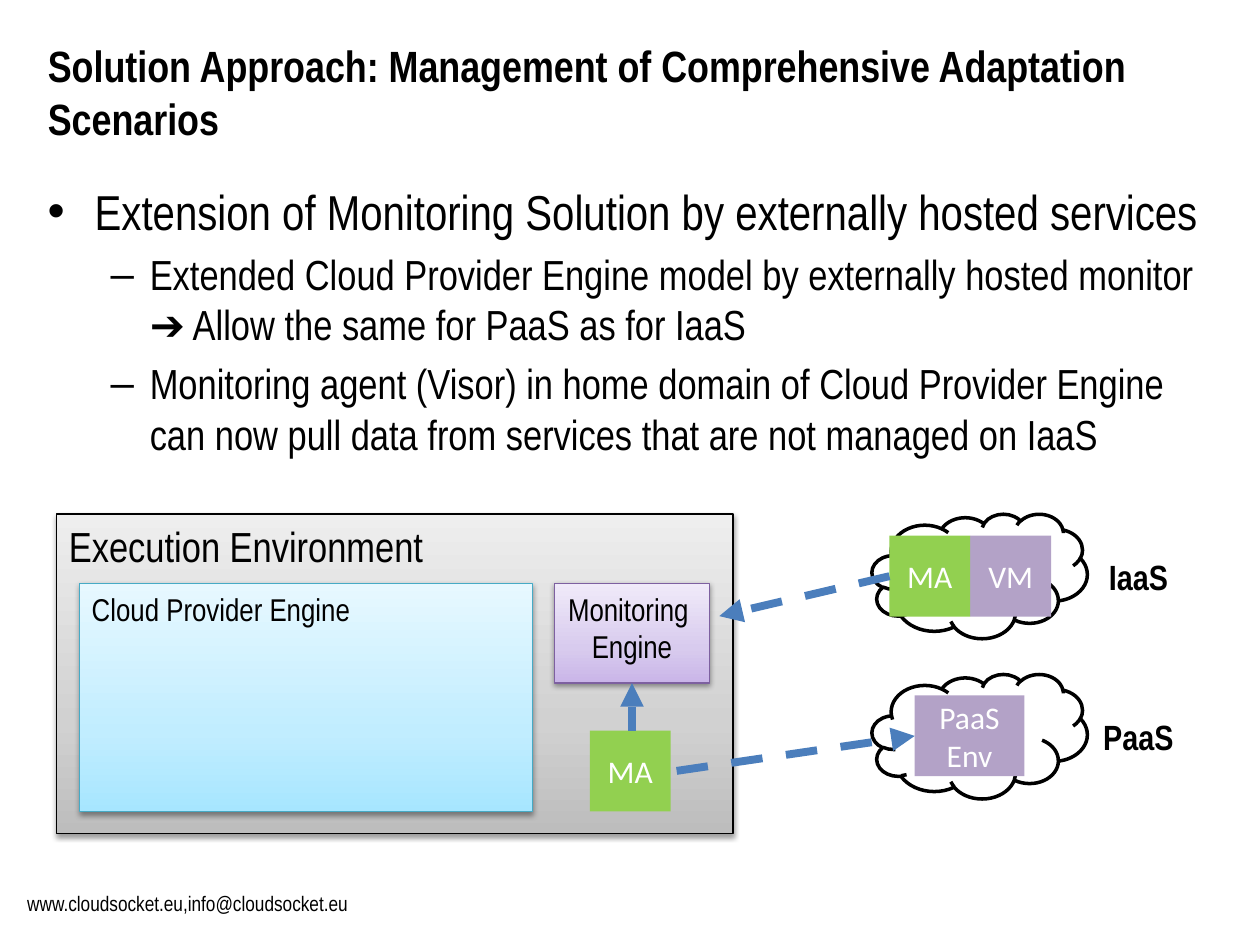
from copy import deepcopy
from lxml.etree import SubElement as Sub
from pptx import Presentation
from pptx.dml.color import RGBColor
from pptx.enum.dml import MSO_LINE as Dash
from pptx.enum.shapes import MSO_CONNECTOR as Conn, MSO_SHAPE as Kind
from pptx.enum.text import MSO_ANCHOR as Anchor, MSO_AUTO_SIZE as Auto, PP_ALIGN as Align
from pptx.oxml.ns import qn
from pptx.util import Cm, Pt

TITLE = "Solution Approach: Management of Comprehensive Adaptation Scenarios"
POINTS = [
    (0, "Extension of Monitoring Solution by externally hosted services"),
    (1, "Extended Cloud Provider Engine model by externally hosted monitor\v"
        "➔ Allow the same for PaaS as for IaaS"),
    (1, "Monitoring agent (Visor) in home domain of Cloud Provider Engine "
        "can now pull data from services that are not managed on IaaS"),
]
LEVELS = [("•", 28, 0.95, 0.95), ("–", 24, 2.06, 0.79)]
FOOTER = "www.cloudsocket.eu,info@cloudsocket.eu"
CLOUDS = [("PaaS", 13.59), ("IaaS", 10.36)]
GREEN, LILAC, BLUE = "92D050", "B3A2C7", "4B7EBC"
SIDE = 1.63
TILES = {
    "env": (["PaaS", "Env"], 18.44, 14.02, 2.21, LILAC),
    "vm": (["VM"], 19.56, 10.8, SIDE, LILAC),
    "agent": (["MA"], 11.89, 14.73, SIDE, GREEN),
    "remote": (["MA"], 17.93, 10.8, SIDE, GREEN),
}
PANELS = {
    "frame": (Kind.RECTANGLE, [], (1.14, 10.36, 13.64, 6.45),
              ("BDBDBD", "D1D1D1", "EEEEEE"), "000000", Align.LEFT),
    "engine": (Kind.ROUNDED_RECTANGLE, ["Cloud Provider Engine"], (1.6, 11.76, 9.14, 4.6),
               ("A7E6FF", "C1EDFF", "E7F8FF"), "46AAC5", Align.LEFT),
    "monitor": (Kind.ROUNDED_RECTANGLE, ["Monitoring ", "Engine"], (11.18, 11.76, 3.12, 2.01),
                ("C9B5E8", "D8CBEE", "F0EAF9"), "7D60A0", Align.CENTER),
}


def color(code):
    return RGBColor.from_string(code)


def style(para, size, font="Arial Narrow", ink="000000", bold=False, align=Align.LEFT):
    para.alignment = align
    para.font.size, para.font.name, para.font.bold = Pt(size), font, bold
    para.font.color.rgb = color(ink)


def write(shape, lines, anchor=Anchor.TOP, **look):
    frame = shape.text_frame
    frame.word_wrap, frame.auto_size = True, Auto.NONE
    frame.vertical_anchor = anchor
    frame.text = "\n".join(lines)
    for para in frame.paragraphs:
        style(para, **look)


def label(slide, text, area, **look):
    box = slide.shapes.add_textbox(*map(Cm, area))
    write(box, [text], **look)


def outline(slide, kind, area, fill=None, line=None, width=0.75):
    shape = slide.shapes.add_shape(kind, *map(Cm, area))
    shape.shadow.inherit = False
    if fill:
        shape.fill.solid()
        shape.fill.fore_color.rgb = color(fill)
    if line:
        shape.line.color.rgb = color(line)
        shape.line.width = Pt(width)
    else:
        shape.line.fill.background()
    return shape


def shade(shape, tints):
    shape.fill.gradient()
    shape.fill.gradient_angle = 90
    stops = shape.fill._fill._gradFill.find(qn("a:gsLst"))
    stops.append(deepcopy(stops[0]))
    for stop, spot, tint in zip(shape.fill.gradient_stops, (0, 0.35, 1), tints):
        stop.position = spot
        stop.color.rgb = color(tint)
    effects = shape._element.spPr.find(qn("a:effectLst"))
    cast = Sub(effects, qn("a:outerShdw"), blurRad="40000", dist="20000",
               dir="5400000", rotWithShape="0")
    black = Sub(cast, qn("a:srgbClr"), val="000000")
    Sub(black, qn("a:alpha"), val="38000")


def panel(slide, kind, lines, area, tints, line, align):
    shape = outline(slide, kind, area, line=line)
    shade(shape, tints)
    if kind == Kind.ROUNDED_RECTANGLE:
        shape.adjustments[0] = 0
    if lines:
        write(shape, lines, size=18, align=align)
    return shape


def tile(slide, lines, left, top, width, fill):
    shape = outline(slide, Kind.RECTANGLE, (left, top, width, SIDE), fill)
    write(shape, lines, Anchor.MIDDLE, size=18, font="Calibri", ink="FFFFFF", align=Align.CENTER)
    return shape


def arrow(slide, start, end, dash=Dash.DASH):
    link = slide.shapes.add_connector(Conn.STRAIGHT, *map(Cm, start + end))
    link.line.color.rgb = color(BLUE)
    link.line.width = Pt(4.5)
    link.line.dash_style = dash
    Sub(link.line._get_or_add_ln(), qn("a:tailEnd"), type="triangle")
    Sub(link._element.spPr, qn("a:effectLst"))
    return link


def bullets(slide, area):
    box = slide.shapes.add_textbox(*map(Cm, area))
    frame = box.text_frame
    frame.word_wrap = True
    for n, (level, text) in enumerate(POINTS):
        mark, size, left, hang = LEVELS[level]
        para = frame.add_paragraph() if n else frame.paragraphs[0]
        para.text, para.level = text, level
        props = para._p.get_or_add_pPr()
        props.set("marL", str(Cm(left)))
        props.set("indent", str(-Cm(hang)))
        Sub(props, qn("a:buFont"), typeface="Arial")
        Sub(props, qn("a:buChar"), char=mark)
        if n:
            para.space_before = Pt(size * 0.2)
        style(para, size)


def main():
    deck = Presentation()
    deck.slide_width, deck.slide_height = Cm(25.4), Cm(19.05)
    slide = deck.slides.add_slide(deck.slide_layouts[5])
    title = slide.shapes.title
    title.left, title.top, title.width, title.height = map(Cm, (0.71, 0.56, 24, 2.57))
    write(title, [TITLE], Anchor.MIDDLE, size=25, bold=True)
    bullets(slide, (0.71, 3.53, 24, 6.6))
    label(slide, FOOTER, (0.3, 17.83, 7.21, 0.76), size=12)

    for name, top in CLOUDS:
        outline(slide, Kind.CLOUD, (17.58, top, 4.34, 2.51), "FFFFFF", "000000", 2)
        label(slide, name, (21.92, top + 0.71, 2.06, 1.12), size=20, bold=True, align=Align.CENTER)
    panels = {name: panel(slide, *spec) for name, spec in PANELS.items()}
    label(slide, "Execution Environment", (1.14, 10.36, 9.68, 1.27), size=24)
    tiles = {name: tile(slide, *spec) for name, spec in TILES.items()}

    pull = arrow(slide, (17.93, 11.62), (14.5, 12.42))
    pull.begin_connect(tiles["remote"], 1)
    probe = arrow(slide, (13.64, 15.54), (18.44, 14.84))
    probe.end_connect(tiles["env"], 1)
    feed = arrow(slide, (12.74, 14.73), (12.74, 13.77), Dash.SQUARE_DOT)
    feed.end_connect(panels["monitor"], 2)
    deck.save("out.pptx")


if __name__ == "__main__":
    main()
